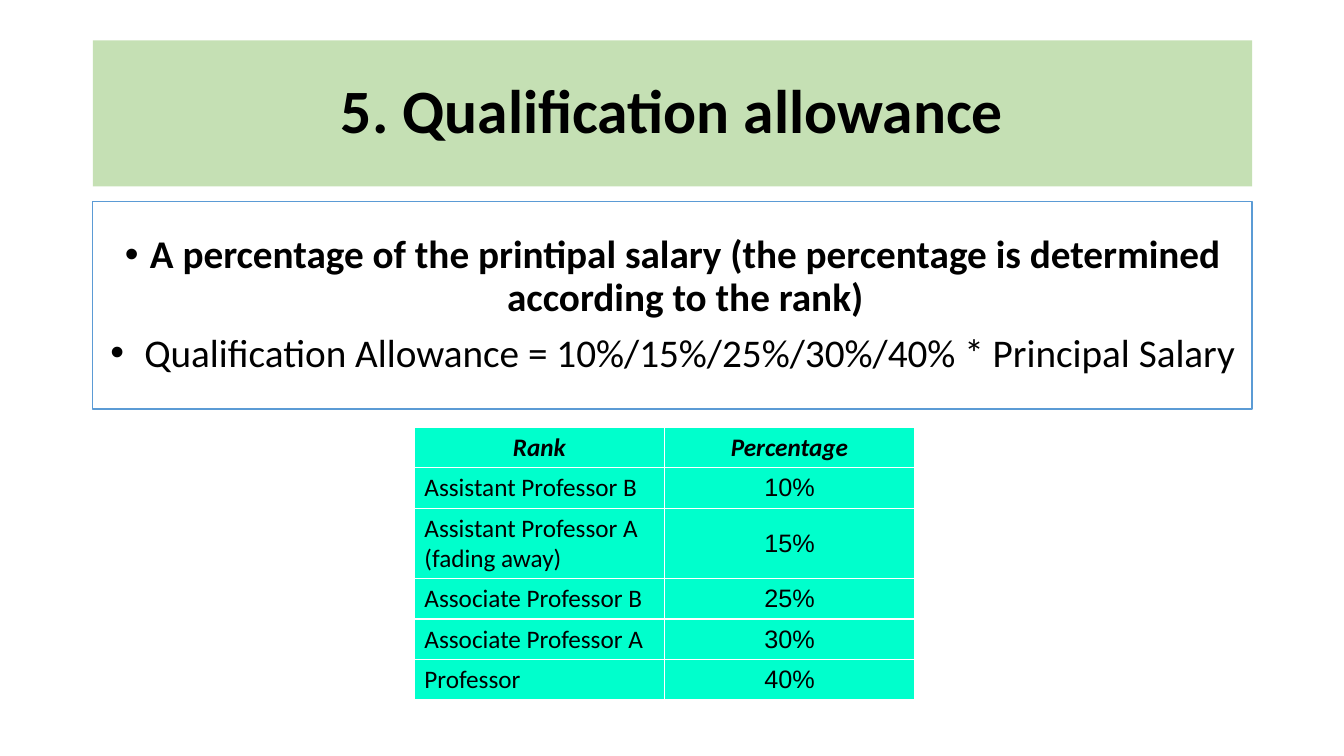
from dataclasses import dataclass

from lxml import etree
from pptx import Presentation
from pptx import util as u
from pptx.dml.color import RGBColor
from pptx.enum import text
from pptx.oxml.ns import qn


@dataclass(frozen=True)
class Theme:
    font: str = "Calibri"
    rtl_font: str = "Arial"
    ink: RGBColor = RGBColor(0, 0, 0)
    paper: RGBColor = RGBColor(255, 255, 255)
    title_fill: RGBColor = RGBColor(0xC5, 0xE0, 0xB4)
    outline: RGBColor = RGBColor(0x5B, 0x9B, 0xD5)
    cell_fill: RGBColor = RGBColor(0x00, 0xFF, 0xCC)
    title_size: u.Pt = u.Pt(44)
    body_size: u.Pt = u.Pt(28)
    table_size: u.Pt = u.Pt(18)


theme = Theme()


def format_paragraph(paragraph, size, bold=False, italic=False, centred=True):
    paragraph.alignment = text.PP_ALIGN.CENTER if centred else text.PP_ALIGN.LEFT
    for run in paragraph.runs:
        run.font.name = theme.font
        run.font.size = size
        run.font.bold = bold
        run.font.italic = italic
        run.font.color.rgb = theme.ink


def set_hanging_indent(paragraph, indent):
    properties = paragraph._p.get_or_add_pPr()
    properties.set("marL", str(indent))
    properties.set("indent", str(-indent))
    return properties


presentation = Presentation()
presentation.slide_width = u.Inches(13.33)
presentation.slide_height = u.Inches(7.5)
slide = presentation.slides.add_slide(presentation.slide_layouts[5])

# Title and explanation share one column
column_left, column_width = u.Inches(0.92), u.Inches(11.5)

title = slide.shapes.title
title.left, title.top = column_left, u.Inches(0.4)
title.width, title.height = column_width, u.Inches(1.45)
title.fill.solid()
title.fill.fore_color.rgb = theme.title_fill
title.text_frame.text = "5. Qualification allowance"
title.text_frame.auto_size = text.MSO_AUTO_SIZE.NONE
title.text_frame.vertical_anchor = text.MSO_ANCHOR.MIDDLE
heading = title.text_frame.paragraphs[0]
heading.line_spacing = 0.9
set_hanging_indent(heading, u.Inches(0.56))
format_paragraph(heading, theme.title_size, bold=True)

explanation = slide.shapes.add_textbox(
    column_left, u.Inches(2), column_width, u.Inches(2.06))
explanation.fill.solid()
explanation.fill.fore_color.rgb = theme.paper
explanation.line.color.rgb = theme.outline
explanation.line.width = u.Pt(1)
frame = explanation.text_frame
frame.word_wrap = True
frame.vertical_anchor = text.MSO_ANCHOR.MIDDLE
frame.text = (
    "A percentage of the printipal salary "
    "(the percentage is determined according to the rank)\n"
    " Qualification Allowance = 10%/15%/25%/30%/40% * Principal Salary"
)
for index, paragraph in enumerate(frame.paragraphs):
    paragraph.line_spacing = 0.9
    paragraph.space_before = u.Pt(10 if index else 0)
    properties = set_hanging_indent(paragraph, u.Inches(0.25))
    bullet_font = etree.SubElement(properties, qn("a:buFont"))
    bullet_font.set("typeface", theme.rtl_font)
    etree.SubElement(properties, qn("a:buChar")).set("char", "•")
    format_paragraph(paragraph, theme.body_size, bold=index == 0)

# Percentage by rank
rank_rows = [
    ("Rank", "Percentage"),
    ("Assistant Professor B", "10%"),
    ("Assistant Professor A (fading away)", "15%"),
    ("Associate Professor B", "25%"),
    ("Associate Professor A", "30%"),
    ("Professor", "40%"),
]
row_heights = [0.4, 0.4, 0.7, 0.4, 0.4, 0.4]
table = slide.shapes.add_table(
    len(rank_rows), 2, u.Inches(4.11), u.Inches(4.24),
    u.Inches(4.96), u.Inches(sum(row_heights))).table

for row_index, (values, height) in enumerate(zip(rank_rows, row_heights)):
    table.rows[row_index].height = u.Inches(height)
    is_header = row_index == 0
    for column_index, value in enumerate(values):
        cell = table.cell(row_index, column_index)
        cell.fill.solid()
        cell.fill.fore_color.rgb = theme.cell_fill
        cell.vertical_anchor = text.MSO_ANCHOR.MIDDLE
        cell.text_frame.text = value
        paragraph = cell.text_frame.paragraphs[0]
        right_to_left = is_header or column_index == 1
        format_paragraph(paragraph, theme.table_size, bold=is_header,
                         italic=is_header, centred=right_to_left)
        if right_to_left:
            paragraph._p.get_or_add_pPr().set("rtl", "1")
            run_properties = paragraph.runs[0].font._element
            complex_font = etree.SubElement(run_properties, qn("a:cs"))
            complex_font.set("typeface", theme.rtl_font)

presentation.save("out.pptx")
